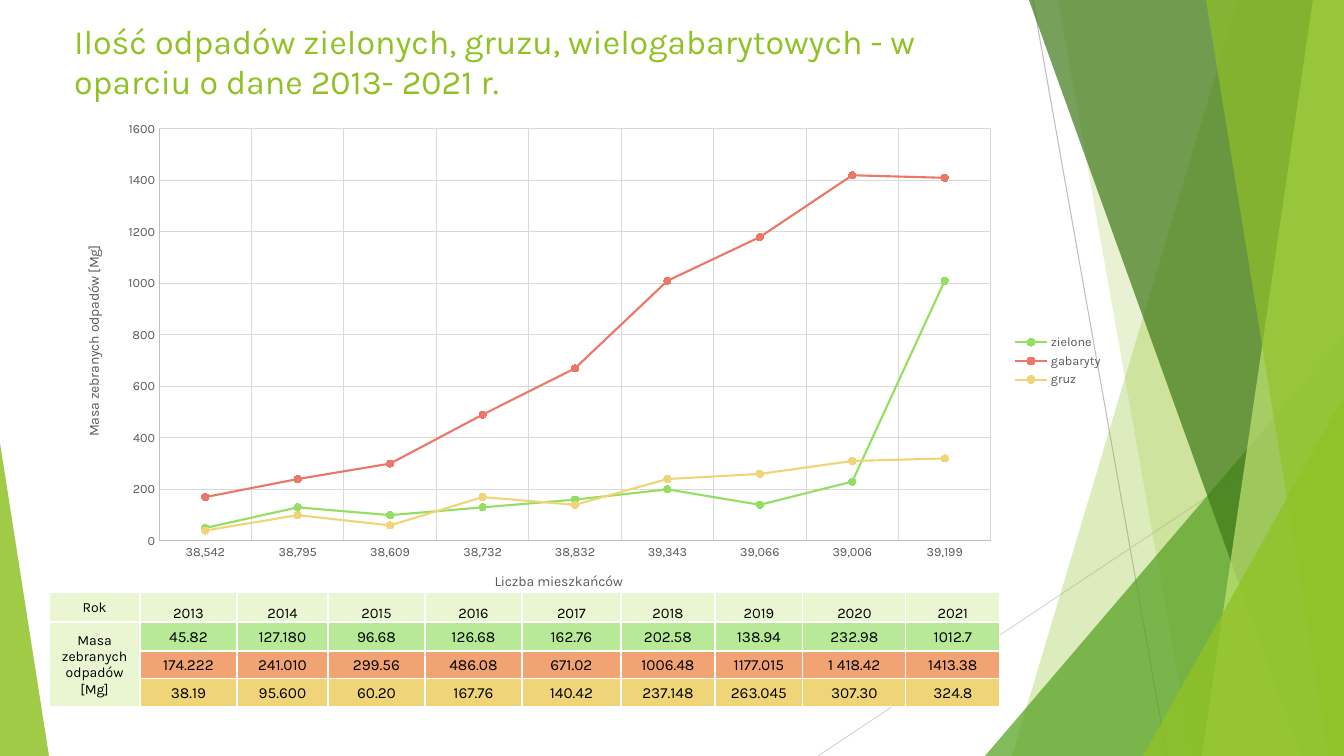
from lxml.etree import SubElement
from pptx import Presentation
from pptx.chart.data import CategoryChartData
from pptx.dml.color import RGBColor
from pptx.enum.chart import XL_CHART_TYPE as ChartType, XL_LEGEND_POSITION as LegendPosition
from pptx.enum.chart import XL_MARKER_STYLE as MarkerStyle, XL_TICK_MARK as TickMark
from pptx.enum.shapes import MSO_CONNECTOR as Connector, MSO_SHAPE as Preset
from pptx.enum.text import MSO_ANCHOR as Anchor, PP_ALIGN as Align
from pptx.oxml import parse_xml
from pptx.oxml.ns import nsdecls, qn
from pptx.util import Emu, Pt

SCALE = 914400 / 100.8
PAGE = (1344, 756)
FONT = "Karla"
COLORS = {
    "lime": "90C226", "green": "54A021", "forest": "3F7819", "pale": "C0E474",
    "silver": "BFBFBF", "grid": "D9D9D9", "gray": "595959", "black": "000000", "white": "FFFFFF",
    "header": "EAF6D1", "zielone": "94DE61", "gabaryty": "EB7766", "gruz": "F0D578",
    "zielone row": "B7E996", "gabaryty row": "F1A374", "gruz row": "F0D578",
}
YEARS = range(2013, 2022)
RESIDENTS = [38542, 38795, 38609, 38732, 38832, 39343, 39066, 39006, 39199]
WASTE = {
    "zielone": ["45.82", "127.180", "96.68", "126.68", "162.76", "202.58", "138.94", "232.98", "1012.7"],
    "gabaryty": ["174.222", "241.010", "299.56", "486.08", "671.02", "1006.48", "1177.015", "1 418.42", "1413.38"],
    "gruz": ["38.19", "95.600", "60.20", "167.76", "140.42", "237.148", "263.045", "307.30", "324.8"],
}
COLUMNS = [91, 97, 91, 97, 97, 99, 94, 88, 103, 94]
ROWS = [30, 29, 28, 28]


def px(length):
    """Turn pixels into EMU."""
    return Emu(round(length * SCALE))


def color(name):
    """Look up a named colour."""
    return RGBColor.from_string(COLORS[name])


def style_font(font, size, name):
    """Set face, size and colour of a font."""
    font.name, font.size, font.bold = FONT, Pt(size), False
    font.color.rgb = color(name)


def style_line(line, name, width):
    """Set colour and width of a line."""
    line.color.rgb, line.width = color(name), Pt(width)


def tint(shape, name, opacity):
    """Give a shape a translucent fill without an outline."""
    shape.shadow.inherit = False
    shape.line.fill.background()
    shape.fill.solid()
    shape.fill.fore_color.rgb = color(name)
    tone = shape.element.spPr.find(qn("a:solidFill"))[0]
    SubElement(tone, qn("a:alpha"), val=str(opacity * 1000))


def add_facets(page, box):
    """Draw the crossing green facets and thin lines inside the box."""
    left, top, width, height = box
    right, bottom = left + width, top + height

    def line(start, end, name):
        """Draw one thin line."""
        thread = page.shapes.add_connector(Connector.STRAIGHT, *map(px, start + end))
        style_line(thread.line, name, 0.75)
        SubElement(thread.element.spPr, qn("a:effectLst"))

    def band(upper, lower, name, opacity):
        """Draw a band from a slanted edge to the right side."""
        outline = page.shapes.build_freeform(upper, top, SCALE)
        outline.add_line_segments([(right, top), (right, bottom), (lower, bottom)])
        tint(outline.convert_to_shape(), name, opacity)

    def triangle(start, breadth, rise, apex, name, opacity):
        """Draw a right triangle standing on the bottom edge."""
        place = map(px, (start, bottom - rise, breadth, rise))
        wedge = page.shapes.add_shape(Preset.ISOSCELES_TRIANGLE, *place)
        wedge.adjustments[0] = apex
        tint(wedge, name, opacity)

    line((1033, top), (1167, bottom), "silver")
    line((right, 406), (818, bottom), "grid")
    band(1238, 1012, "lime", 30)
    band(1058, 1192, "lime", 20)
    triangle(985, right - 985, 420, 1, "green", 72)
    band(1029, 1301, "forest", 70)
    band(1313, 1202, "pale", 70)
    band(1206, 1329, "lime", 65)
    triangle(1143, right - 1143, 360, 1, "lime", 80)
    triangle(left, 49, 313, 0, "lime", 85)


def add_title(page, box):
    """Fill the title placeholder in front of the facets."""
    title = page.shapes.title
    title.element.getparent().append(title.element)
    title.left, title.top, title.width, title.height = map(px, box)
    frame = title.text_frame
    frame.text = "Ilość odpadów zielonych, gruzu, wielogabarytowych - w oparciu o dane 2013- 2021 r."
    frame.word_wrap, frame.vertical_anchor, frame.margin_top = True, Anchor.TOP, px(5)
    para = frame.paragraphs[0]
    para.alignment = Align.LEFT
    style_font(para.runs[0].font, 24.3, "lime")


def set_layout(parent, box, place, inner=False):
    """Place a chart part, given in page pixels, inside the chart box."""
    layout = parent.find(qn("c:layout"))
    if layout is None:
        layout = parse_xml(f"<c:layout {nsdecls('c')}/>")
        parent.insert(0, layout)
    manual = SubElement(layout, qn("c:manualLayout"))
    if inner:
        SubElement(manual, qn("c:layoutTarget"), val="inner")
    for key in ("xMode", "yMode"):
        SubElement(manual, qn(f"c:{key}"), val="edge")
    left, top, width, height = box
    shares = [(place[0] - left) / width, (place[1] - top) / height]
    shares += [length / whole for length, whole in zip(place[2:], (width, height))]
    for key, share in zip("xywh", shares):
        SubElement(manual, qn(f"c:{key}"), val=f"{share:.4f}")


def style_axis(axis, caption, box, place, turn):
    """Format one axis with its grid and caption."""
    axis.has_major_gridlines = True
    axis.major_tick_mark = axis.minor_tick_mark = TickMark.NONE
    style_line(axis.major_gridlines.format.line, "grid", 0.75)
    style_line(axis.format.line, "silver", 0.75)
    style_font(axis.tick_labels.font, 9, "gray")
    para = axis.axis_title.text_frame.paragraphs[0]
    span = para.add_run()
    span.text = caption
    style_font(span.font, 10, "gray")
    title = axis.axis_title.element
    next(title.iter(qn("a:bodyPr"))).set("rot", str(turn * 60000))
    set_layout(title, box, place)


def add_waste_chart(page, box):
    """Plot waste mass, rounded to tens, against the number of residents."""
    data = CategoryChartData()
    data.categories = RESIDENTS
    data.categories.number_format = "#,##0"
    for name, masses in WASTE.items():
        data.add_series(name, [round(float(mass.replace(" ", "")), -1) for mass in masses])
    chart = page.shapes.add_chart(ChartType.LINE_MARKERS, *map(px, box), data).chart
    style_font(chart.font, 10, "black")
    chart.has_title = False
    chart.has_legend = True
    chart.legend.position, chart.legend.include_in_layout = LegendPosition.RIGHT, False
    style_font(chart.legend.font, 9, "gray")
    chart.plots[0].vary_by_categories = False
    for series in chart.plots[0].series:
        series.smooth = False
        style_line(series.format.line, series.name, 1.5)
        marker = series.marker
        marker.style, marker.size = MarkerStyle.CIRCLE, 5
        marker.format.fill.solid()
        marker.format.fill.fore_color.rgb = color(series.name)
        style_line(marker.format.line, series.name, 0.75)
    style_axis(chart.category_axis, "Liczba mieszkańców", box, (492, 570), 0)
    style_axis(chart.value_axis, "Masa zebranych odpadów [Mg]", box, (82, 243), -90)
    labels = chart.category_axis.tick_labels
    labels.number_format, labels.number_format_is_linked = "#,##0", False
    scale = chart.value_axis
    scale.minimum_scale, scale.maximum_scale, scale.major_unit = 0, 1600, 200
    axis = next(chart.element.iter(qn("c:valAx")))
    if axis.find(qn("c:crossBetween")) is None:
        between = parse_xml(f'<c:crossBetween {nsdecls("c")} val="between"/>')
        axis.find(qn("c:crosses")).addnext(between)
    set_layout(next(chart.element.iter(qn("c:plotArea"))), box, (159, 129, 832, 412), True)


def fill_cell(cell, text, size, fill, anchor=Anchor.MIDDLE):
    """Write centred text into a coloured table cell."""
    cell.fill.solid()
    cell.fill.fore_color.rgb = color(fill)
    cell.margin_left = cell.margin_right = cell.margin_top = px(1)
    cell.margin_bottom = 0
    cell.vertical_anchor = anchor
    cell.text = text
    for para in cell.text_frame.paragraphs:
        para.alignment = Align.CENTER
        for span in para.runs:
            style_font(span.font, size, "black")


def add_waste_table(page, box):
    """List the yearly masses in coloured rows."""
    frame = page.shapes.add_table(len(ROWS), len(COLUMNS), *map(px, box))
    table = frame.table
    table.first_row = table.horz_banding = False
    for column, width in zip(table.columns, COLUMNS):
        column.width = px(width)
    for row, height in zip(table.rows, ROWS):
        row.height = px(height)
    fill_cell(table.cell(0, 0), "Rok", 10, "header")
    for column, year in enumerate(YEARS, 1):
        fill_cell(table.cell(0, column), str(year), 10.5, "header", Anchor.BOTTOM)
    for row, (name, masses) in enumerate(WASTE.items(), 1):
        for column, mass in enumerate(masses, 1):
            fill_cell(table.cell(row, column), mass, 11, f"{name} row")
    table.cell(1, 0).merge(table.cell(3, 0))
    fill_cell(table.cell(1, 0), "Masa\nzebranych odpadów\v[Mg]", 10, "header")
    for slot in frame.element.iter(qn("a:tc")):
        for index, side in enumerate("LRTB"):
            slot.get_or_add_tcPr().insert(index, parse_xml(
                f'<a:ln{side} {nsdecls("a")} w="12700"><a:solidFill>'
                f'<a:srgbClr val="{COLORS["white"]}"/></a:solidFill></a:ln{side}>'))


def main():
    """Build and save the deck."""
    deck = Presentation()
    deck.slide_width, deck.slide_height = map(px, PAGE)
    page = deck.slides.add_slide(deck.slide_layouts[5])
    add_facets(page, (0, 0, *PAGE))
    add_title(page, (64, 15, 948, 145))
    add_waste_chart(page, (64, 112, 1049, 498))
    add_waste_table(page, (49, 592, sum(COLUMNS), sum(ROWS)))
    deck.save("out.pptx")


if __name__ == "__main__":
    main()
